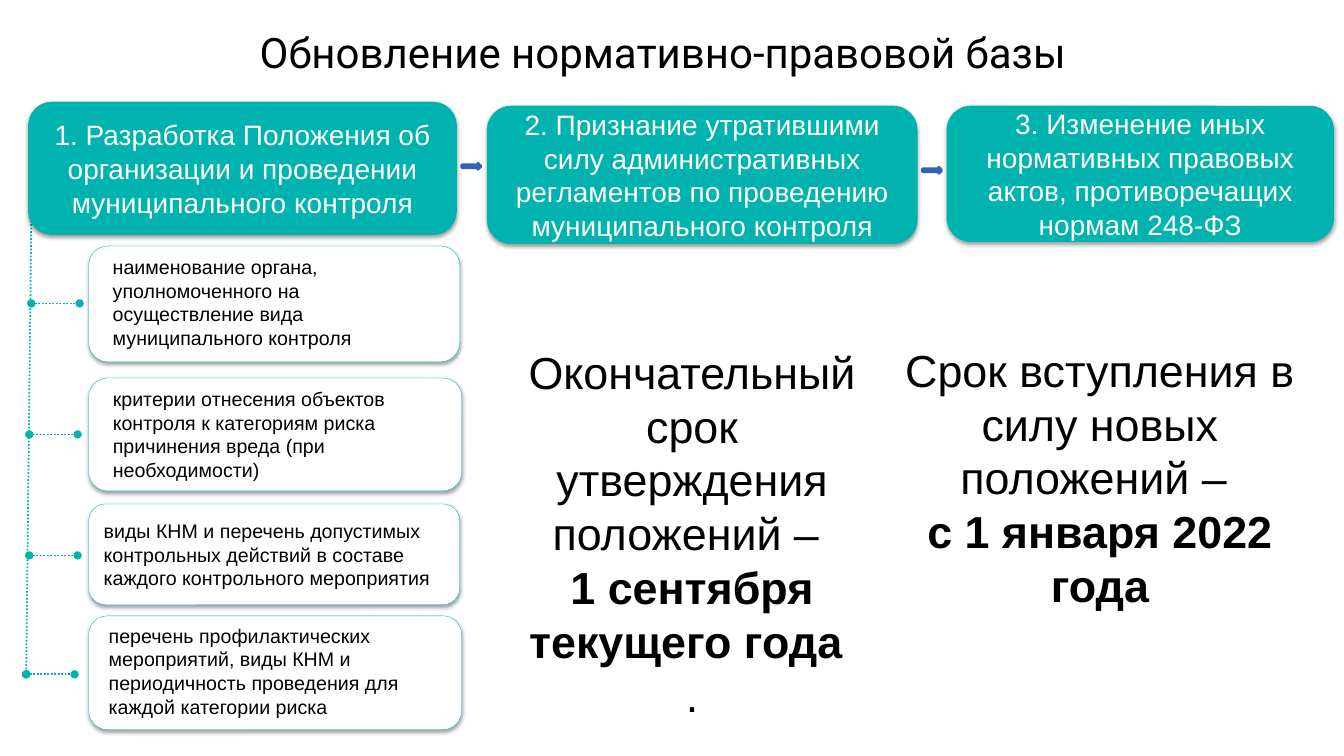
"""Build the slide on updating the legal framework."""
from lxml.etree import SubElement
from pptx import Presentation
from pptx.dml.color import RGBColor
from pptx.enum.dml import MSO_LINE
from pptx.enum.shapes import MSO_CONNECTOR, MSO_SHAPE
from pptx.enum.text import MSO_ANCHOR, MSO_AUTO_SIZE, PP_ALIGN
from pptx.oxml.ns import qn
from pptx.util import Inches, Pt

TEAL = RGBColor(0x00, 0xB3, 0xAF)
CYAN = RGBColor(0x00, 0xBE, 0xDE)
BLUE = RGBColor(0x42, 0x85, 0xF4)
NAVY = RGBColor(0x31, 0x62, 0xB5)
WHITE = RGBColor(0xFF, 0xFF, 0xFF)
BLACK = RGBColor(0x00, 0x00, 0x00)

TITLE = " Обновление нормативно-правовой базы"
STEPS = [
    ((0.3, 1.03, 4.21, 1.28),
     "1. Разработка Положения об организации и проведении муниципального контроля"),
    ((4.85, 1.07, 4.23, 1.33),
     "2. Признание утратившими силу административных регламентов по проведению муниципального контроля"),
    ((9.41, 1.07, 3.8, 1.31),
     "3. Изменение иных нормативных правовых актов, противоречащих нормам 248-ФЗ"),
]
ARROWS = [(4.58, 1.62, 0.19, 0.06), (9.15, 1.66, 0.19, 0.06)]
SPINE = (0.31, 2.19, 0.26, 6.69)
CARDS = [
    ((0.88, 2.44, 3.68, 1.15), (1.02, 2.48, 3.3, 1.04), (0.31, 3.01),
     "наименование органа, уполномоченного на осуществление вида муниципального контроля"),
    ((0.88, 3.75, 3.7, 1.12), (1.02, 3.79, 3.01, 1.04), (0.29, 4.31),
     "критерии отнесения объектов контроля к категориям риска причинения вреда (при необходимости)"),
    ((0.88, 5, 3.68, 1), (0.93, 5.1, 3.53, 0.81), (0.29, 5.51),
     "виды КНМ и перечень допустимых контрольных действий в составе каждого контрольного мероприятия"),
    ((0.88, 6.11, 3.7, 1.13), (0.98, 6.14, 3.34, 1.04), (0.26, 6.69),
     "перечень профилактических мероприятий, виды КНМ и периодичность проведения для каждой категории риска"),
]
BRANCH = 0.48
DATES = [
    ((5.13, 3.37, 3.47, 4.17),
     [("Окончательный срок утверждения положений – ", False),
      ("1 сентября текущего года ", True), (".", False)]),
    ((8.61, 3.35, 4.6, 2.79),
     [("Срок вступления в силу новых положений – ", False),
      ("с 1 января 2022 года", True)]),
]


def cast(effects, blur, dist, angle, alpha):
    """Add an outer shadow to an effect list."""
    shade = SubElement(effects, qn("a:outerShdw"), blurRad=str(Pt(blur)),
                       dist=str(Pt(dist)), dir=str(angle * 60000),
                       algn="ctr", rotWithShape="0")
    tint = SubElement(shade, qn("a:srgbClr"), val="000000")
    SubElement(tint, qn("a:alpha"), val=str(alpha * 1000))


def block(kind, box, fill, edge, width, raised=False):
    """Draw a filled preset shape."""
    shape = slide.shapes.add_shape(kind, *map(Inches, box))
    shape.shadow.inherit = False
    shape.fill.solid()
    shape.fill.fore_color.rgb = fill
    shape.line.color.rgb = edge
    shape.line.width = Pt(width)
    if raised:
        cast(shape._element.spPr.find(qn("a:effectLst")), 3.1, 1.6, 90, 38)
    return shape


def write(shape, lines, size, color=BLACK, font="Arial",
          align=PP_ALIGN.CENTER, anchor=MSO_ANCHOR.MIDDLE):
    """Fill a shape with paragraphs of one run each."""
    frame = shape.text_frame
    frame.word_wrap = True
    frame.vertical_anchor = anchor
    for i, (text, bold) in enumerate(lines):
        para = frame.add_paragraph() if i else frame.paragraphs[0]
        para.alignment = align
        run = para.add_run()
        run.text = text
        run.font.size = Pt(size)
        run.font.name = font
        run.font.bold = bold
        run.font.color.rgb = color
    return frame


def link(ends, *tips):
    """Draw a dotted line with round tips."""
    line = slide.shapes.add_connector(MSO_CONNECTOR.STRAIGHT, *map(Inches, ends))
    line.line.color.rgb = TEAL
    line.line.width = Pt(1.25)
    line.line.dash_style = MSO_LINE.ROUND_DOT
    for tip in tips:
        SubElement(line.line._get_or_add_ln(), qn(tip), type="oval")
    SubElement(line._element.spPr, qn("a:effectLst"))


deck = Presentation()
deck.slide_width, deck.slide_height = Inches(13.33), Inches(7.5)
slide = deck.slides.add_slide(deck.slide_layouts[6])

title = slide.shapes.add_textbox(*map(Inches, (0.23, 0.12, 12.59, 0.88)))
frame = write(title, [(TITLE, False)], 30, font="Roboto")
frame.margin_left = frame.margin_right = Inches(0.03)
frame.margin_top = frame.margin_bottom = Inches(0.03)
head = frame.paragraphs[0]
head.line_spacing = 0.8
head.space_before = Pt(21)
props = head.runs[0].font._element
glow = SubElement(props, qn("a:effectLst"))
props.find(qn("a:solidFill")).addnext(glow)
cast(glow, 3, 3, 45, 43)

link(SPINE, "a:tailEnd")
for box, text in STEPS:
    step = block(MSO_SHAPE.ROUNDED_RECTANGLE, box, TEAL, TEAL, 3, True)
    write(step, [(text, False)], 20, WHITE)
for box in ARROWS:
    block(MSO_SHAPE.RIGHT_ARROW, box, BLUE, NAVY, 2)

for box, inner, (x, y), text in CARDS:
    block(MSO_SHAPE.ROUNDED_RECTANGLE, box, WHITE, CYAN, 0.25, True)
    label = block(MSO_SHAPE.RECTANGLE, inner, WHITE, WHITE, 0.75)
    frame = write(label, [(text, False)], 14, align=PP_ALIGN.LEFT,
                  anchor=MSO_ANCHOR.TOP)
    frame.auto_size = MSO_AUTO_SIZE.SHAPE_TO_FIT_TEXT
    link((x, y, x + BRANCH, y), "a:headEnd", "a:tailEnd")

for box, lines in DATES:
    note = slide.shapes.add_textbox(*map(Inches, box))
    frame = write(note, lines, 32, anchor=MSO_ANCHOR.TOP)
    frame.auto_size = MSO_AUTO_SIZE.SHAPE_TO_FIT_TEXT

deck.save("out.pptx")
